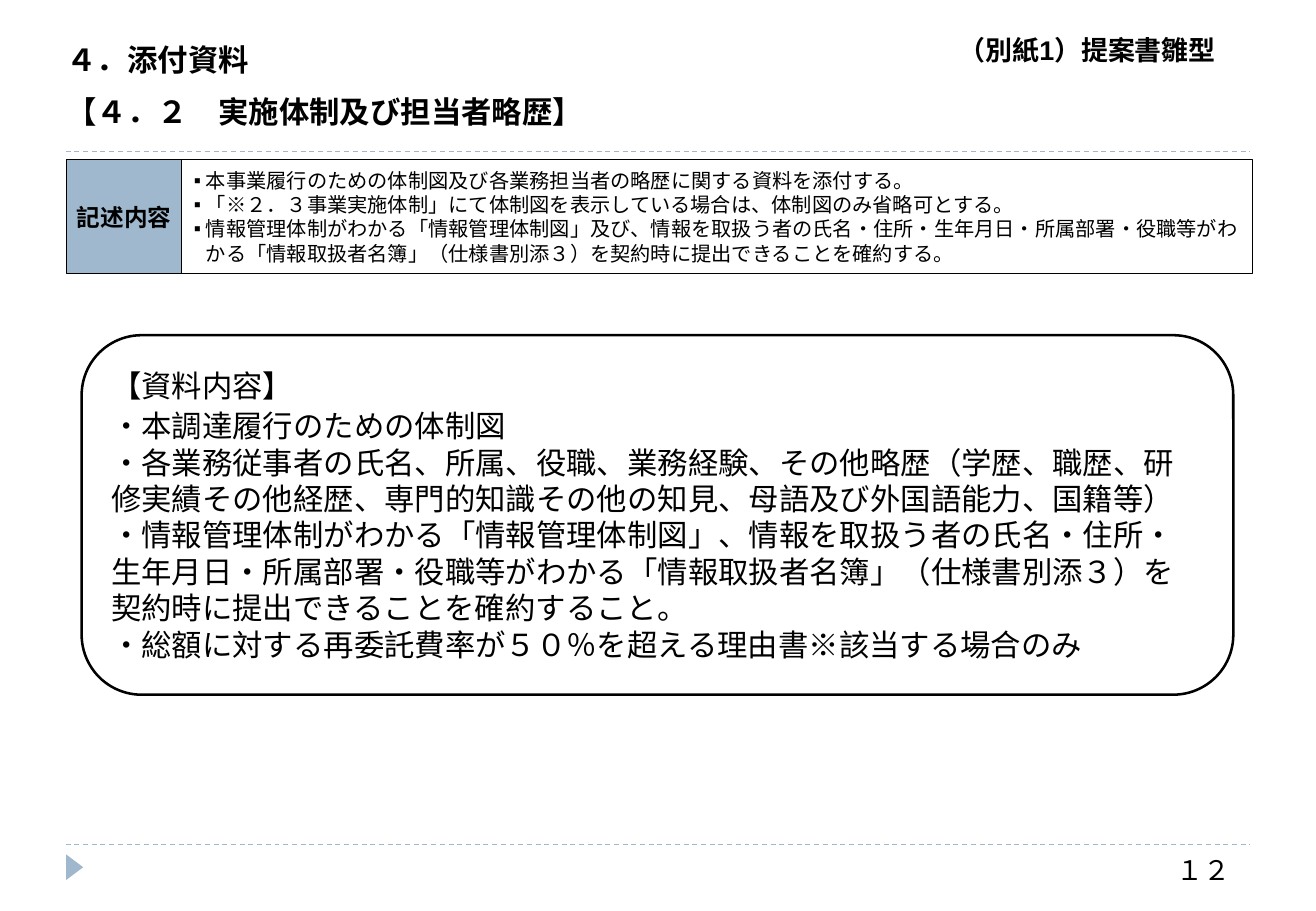
from lxml.etree import SubElement as Sub
from pptx import Presentation
from pptx.dml.color import RGBColor
from pptx.enum.dml import MSO_LINE as Dash
from pptx.enum.shapes import MSO_CONNECTOR as Link, MSO_SHAPE as Form
from pptx.enum.text import MSO_ANCHOR as Anchor, PP_ALIGN as Align
from pptx.oxml.ns import qn
from pptx.util import Pt

BLACK = RGBColor(0, 0, 0)
WHITE = RGBColor(255, 255, 255)
BLUE = RGBColor(0x9F, 0xB8, 0xCD)
LATIN, CJK = "Arial", "Noto Sans CJK JP"

TITLE = ["４．添付資料", "【４．２　実施体制及び担当者略歴】"]
NOTES = [
    "本事業履行のための体制図及び各業務担当者の略歴に関する資料を添付する。",
    "「※２．３事業実施体制」にて体制図を表示している場合は、体制図のみ省略可とする。",
    "情報管理体制がわかる「情報管理体制図」及び、情報を取扱う者の氏名・住所・生年月日・所属部署・役職等がわかる「情報取扱者名簿」（仕様書別添３）を契約時に提出できることを確約する。",
]
BODY = [
    "【資料内容】",
    "・本調達履行のための体制図",
    "・各業務従事者の氏名、所属、役職、業務経験、その他略歴（学歴、職歴、研修実績その他経歴、専門的知識その他の知見、母語及び外国語能力、国籍等）",
    "・情報管理体制がわかる「情報管理体制図」、情報を取扱う者の氏名・住所・生年月日・所属部署・役職等がわかる「情報取扱者名簿」（仕様書別添３）を契約時に提出できることを確約すること。",
    "・総額に対する再委託費率が５０％を超える理由書※該当する場合のみ",
]


def apply(item, style):
    for key, value in style.items():
        setattr(item, key, value)


class Page:
    """Draws styled elements on one slide."""

    def __init__(self, slide, font):
        self.shapes = slide.shapes
        self.font = font

    def rule(self, left, top, right):
        line = self.shapes.add_connector(Link.STRAIGHT, Pt(left), Pt(top), Pt(right), Pt(top))
        line.line.color.rgb = BLUE
        apply(line.line, {"width": Pt(0.75), "dash_style": Dash.DASH})
        Sub(line._element.spPr, qn("a:effectLst"))

    def shape(self, form, box, fill=None, line=None, turn=0):
        shape = self.shapes.add_shape(form, *map(Pt, box))
        shape.shadow.inherit = False
        shape.rotation = turn
        if fill is None:
            shape.fill.background()
        else:
            shape.fill.solid()
            shape.fill.fore_color.rgb = fill
        if line is None:
            shape.line.fill.background()
        else:
            shape.line.color.rgb = BLACK
            shape.line.width = Pt(line)
        return shape

    def label(self, box, texts, **style):
        self.text(self.shapes.add_textbox(*map(Pt, box)), texts, **style)

    def text(self, shape, texts, align=Align.LEFT, anchor=Anchor.TOP,
             wrap=True, gaps=(), bullet=None, **style):
        frame = shape.text_frame
        apply(frame, {"word_wrap": wrap, "vertical_anchor": anchor})
        for i, text in enumerate(texts):
            par = frame.paragraphs[0] if i == 0 else frame.add_paragraph()
            space = gaps[i - 1] if 0 < i <= len(gaps) else 0
            apply(par, {"alignment": align, "space_before": Pt(space)})
            if bullet:
                props = par._p.get_or_add_pPr()
                props.set("marL", str(Pt(7.2)))
                props.set("indent", str(-Pt(7.2)))
                Sub(props, qn("a:buFont"), typeface=LATIN)
                Sub(props, qn("a:buChar"), char=bullet)
            run = par.add_run()
            run.text = text
            apply(run.font, {**self.font, **style})
            run.font.color.rgb = BLACK
            Sub(run._r.get_or_add_rPr(), qn("a:ea"), typeface=CJK)


def main():
    deck = Presentation()
    apply(deck, {"slide_width": Pt(780), "slide_height": Pt(540)})
    slide = deck.slides.add_slide(deck.slide_layouts[6])
    page = Page(slide, {"name": CJK, "size": Pt(18), "bold": False})

    for top in (500.4, 90):
        page.rule(38.9, top, 740.9)
    page.shape(Form.ISOSCELES_TRIANGLE, (36.7, 509, 15.1, 10.1), BLUE, turn=90)
    page.label((547.2, 16.6, 194.4, 26.6), ["（別紙1）提案書雛型"],
               align=Align.CENTER, name=LATIN, size=Pt(16), bold=True)
    page.label((686.2, 502.6, 54, 28.8), ["１２"],
               align=Align.CENTER, name=LATIN, size=Pt(16))

    head = page.shape(Form.RECTANGLE, (39.6, 94.6, 68.2, 67.7), BLUE, 0.5)
    page.text(head, ["記述内容"], align=Align.CENTER, anchor=Anchor.MIDDLE,
              wrap=False, name=LATIN, size=Pt(14), bold=True)
    notes = page.shape(Form.RECTANGLE, (107.8, 94.6, 634.3, 67.7), WHITE, 0.5)
    page.text(notes, NOTES, anchor=Anchor.MIDDLE, bullet="▪", size=Pt(12))

    page.label((32.4, 20.9, 601.2, 67.7), TITLE, gaps=[9], bold=True)
    body = page.shape(Form.ROUNDED_RECTANGLE, (48.4, 198.7, 682.6, 213.1), line=1.5)
    page.text(body, BODY, anchor=Anchor.MIDDLE, gaps=[2])

    deck.save("out.pptx")


if __name__ == "__main__":
    main()
